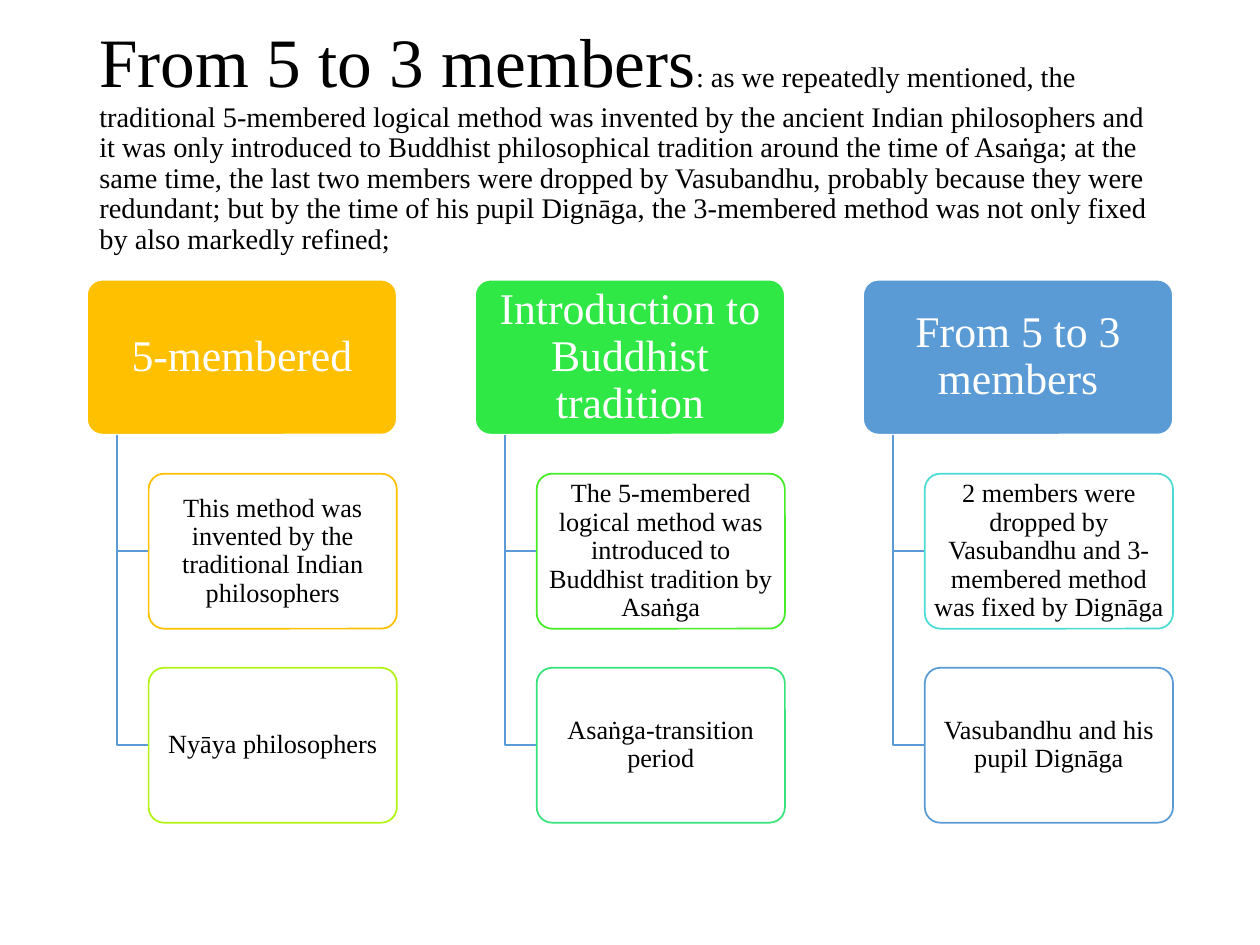
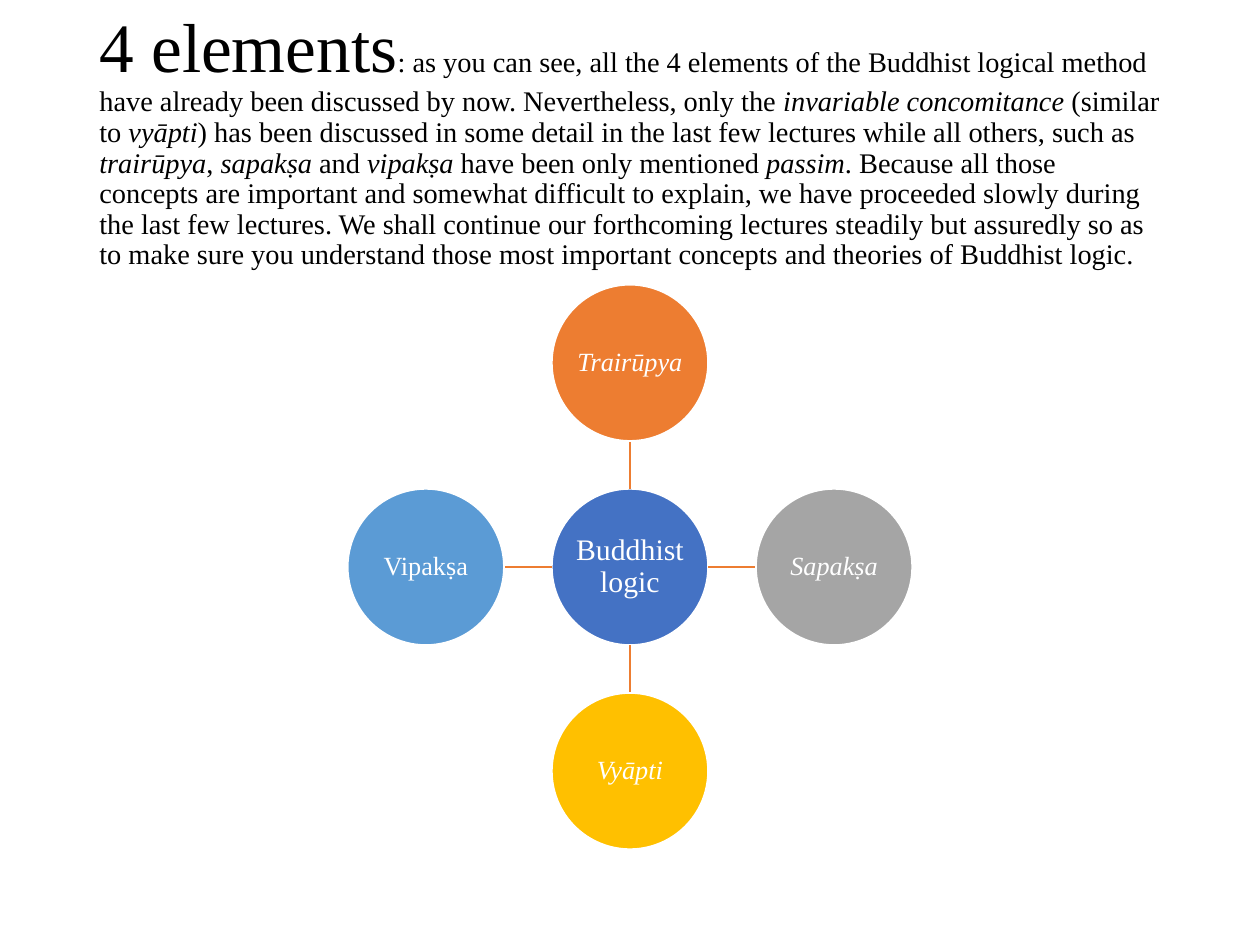
from lxml.etree import SubElement
from pptx import Presentation
from pptx.dml.color import RGBColor
from pptx.enum.shapes import MSO_CONNECTOR, MSO_SHAPE
from pptx.enum.text import MSO_ANCHOR, PP_ALIGN
from pptx.oxml.ns import qn
from pptx.util import Inches, Pt

FONT = "Times New Roman"
BLACK = RGBColor(0x00, 0x00, 0x00)
WHITE = RGBColor(0xFF, 0xFF, 0xFF)
GOLD = RGBColor(0xFF, 0xC0, 0x00)
LIME = RGBColor(0xB2, 0xF5, 0x14)
GREEN = RGBColor(0x30, 0xE8, 0x45)
LEAF = RGBColor(0x46, 0xEC, 0x27)
MINT = RGBColor(0x39, 0xE3, 0x7B)
AQUA = RGBColor(0x4A, 0xDC, 0xD2)
SKY = RGBColor(0x5B, 0x9B, 0xD5)
BLUE = RGBColor(0x44, 0x72, 0xC4)
ORANGE = RGBColor(0xED, 0x7D, 0x31)
GRAY = RGBColor(0xA5, 0xA5, 0xA5)


def add_title(slide, head, parts):
    box = slide.shapes.add_textbox(Inches(0.69), Inches(0.4), Inches(8.62), Inches(1.45))
    frame = box.text_frame
    frame.word_wrap = True
    frame.vertical_anchor = MSO_ANCHOR.MIDDLE
    para = frame.paragraphs[0]
    para.line_spacing = 0.9
    for spot, text in enumerate([head] + parts):
        run = para.add_run()
        run.text = text
        run.font.name = FONT
        run.font.size = Pt(16.2 if spot else 39.6)
        run.font.color.rgb = BLACK
        run.font.italic = spot > 0 and spot % 2 == 0


def add_node(slide, kind, left, top, width, height, fill, line, text, size, color, inset):
    node = slide.shapes.add_shape(kind, Inches(left), Inches(top), Inches(width), Inches(height))
    node.shadow.inherit = False
    node.fill.solid()
    node.fill.fore_color.rgb = fill
    node.line.color.rgb = line
    node.line.width = Pt(1)
    frame = node.text_frame
    frame.word_wrap = True
    frame.vertical_anchor = MSO_ANCHOR.MIDDLE
    frame.margin_left = frame.margin_right = Inches(inset[0])
    frame.margin_top = frame.margin_bottom = Inches(inset[1])
    frame.text = text
    para = frame.paragraphs[0]
    para.alignment = PP_ALIGN.CENTER
    para.line_spacing = 0.9
    font = para.runs[0].font
    font.name = FONT
    font.size = Pt(size)
    font.color.rgb = color
    return node


deck = Presentation()
deck.slide_width = Inches(10)
deck.slide_height = Inches(7.5)
blank = deck.slide_layouts[6]

slide = deck.slides.add_slide(blank)
add_title(slide, "From 5 to 3 members", [
    ": as we repeatedly mentioned, the traditional 5-membered logical method was invented by "
    "the ancient Indian philosophers and it was only introduced to Buddhist philosophical "
    "tradition around the time of Asaṅga; at the same time, the last two members were dropped "
    "by Vasubandhu, probably because they were redundant; but by the time of his pupil Dignāga, "
    "the 3-membered method was not only fixed by also markedly refined;",
])

stages = [
    ("5-membered", GOLD, [
        ("This method was invented by the traditional Indian philosophers", GOLD),
        ("Nyāya philosophers", LIME),
    ]),
    ("Introduction to Buddhist tradition", GREEN, [
        ("The 5-membered logical method was introduced to Buddhist tradition by Asaṅga", LEAF),
        ("Asaṅga-transition period", MINT),
    ]),
    ("From 5 to 3 members", SKY, [
        ("2 members were dropped by Vasubandhu and 3-membered method was fixed by Dignāga", AQUA),
        ("Vasubandhu and his pupil Dignāga", SKY),
    ]),
]
TOP, HIGH, STEP = 2.22, 1.23, 1.54
for col, (name, fill, notes) in enumerate(stages):
    left = 0.69 + 3.08 * col
    head = add_node(slide, MSO_SHAPE.ROUNDED_RECTANGLE, left, TOP, 2.46, HIGH,
                    fill, WHITE, name, 25, WHITE, (0.05, 0.03))
    head.adjustments[0] = 0.1
    stem = left + 0.24
    for row, (text, line) in enumerate(notes, 1):
        top = TOP + STEP * row
        middle = top + HIGH / 2
        path = slide.shapes.build_freeform(Inches(stem), Inches(TOP + HIGH))
        path.add_line_segments([
            (Inches(stem), Inches(middle)),
            (Inches(left + 0.49), Inches(middle)),
        ], close=False)
        elbow = path.convert_to_shape()
        elbow.shadow.inherit = False
        elbow.fill.background()
        elbow.line.color.rgb = SKY
        elbow.line.width = Pt(1)
        note = add_node(slide, MSO_SHAPE.ROUNDED_RECTANGLE, left + 0.49, top, 1.97, HIGH,
                        WHITE, line, text, 15, BLACK, (0.03, 0.02))
        note.adjustments[0] = 0.1
        tint = note._element.spPr.find(qn("a:solidFill"))[0]
        SubElement(tint, qn("a:alpha")).set("val", "90000")

slide = deck.slides.add_slide(blank)
add_title(slide, "4 elements", [
    ": as you can see, all the 4 elements of the Buddhist logical method have already been "
    "discussed by now. Nevertheless, only the ",
    "invariable concomitance",
    " (similar to ",
    "vyāpti",
    ") has been discussed in some detail in the last few lectures while all others, such as ",
    "trairūpya",
    ", ",
    "sapakṣa",
    " and ",
    "vipakṣa",
    " have been only mentioned ",
    "passim",
    ". Because all those concepts are important and somewhat difficult to explain, we have "
    "proceeded slowly during the last few lectures. We shall continue our forthcoming lectures "
    "steadily but assuredly so as to make sure you understand those most important concepts and "
    "theories of Buddhist logic.",
])

MIDX, MIDY, SIZE, REACH = 5, 4.5, 1.24, 1.62
RIM = SIZE / 2
circles = [
    ("Buddhist logic", BLUE, 0, 0, 17, False),
    ("Trairūpya", ORANGE, 0, -1, 15, True),
    ("Sapakṣa", GRAY, 1, 0, 15, True),
    ("Vyāpti", GOLD, 0, 1, 15, True),
    ("Vipakṣa", SKY, -1, 0, 15, False),
]
for text, fill, across, down, size, slant in circles:
    if across or down:
        near, far = RIM, REACH - RIM
        spoke = slide.shapes.add_connector(
            MSO_CONNECTOR.STRAIGHT,
            Inches(MIDX + across * near), Inches(MIDY + down * near),
            Inches(MIDX + across * far), Inches(MIDY + down * far))
        spoke.line.color.rgb = ORANGE
        spoke.line.width = Pt(1)
        SubElement(spoke._element.spPr, qn("a:effectLst"))
    node = add_node(slide, MSO_SHAPE.OVAL, MIDX + across * REACH - RIM,
                    MIDY + down * REACH - RIM, SIZE, SIZE,
                    fill, WHITE, text, size, WHITE, (0.01, 0.01))
    node.text_frame.paragraphs[0].runs[0].font.italic = slant

deck.save("out.pptx")
